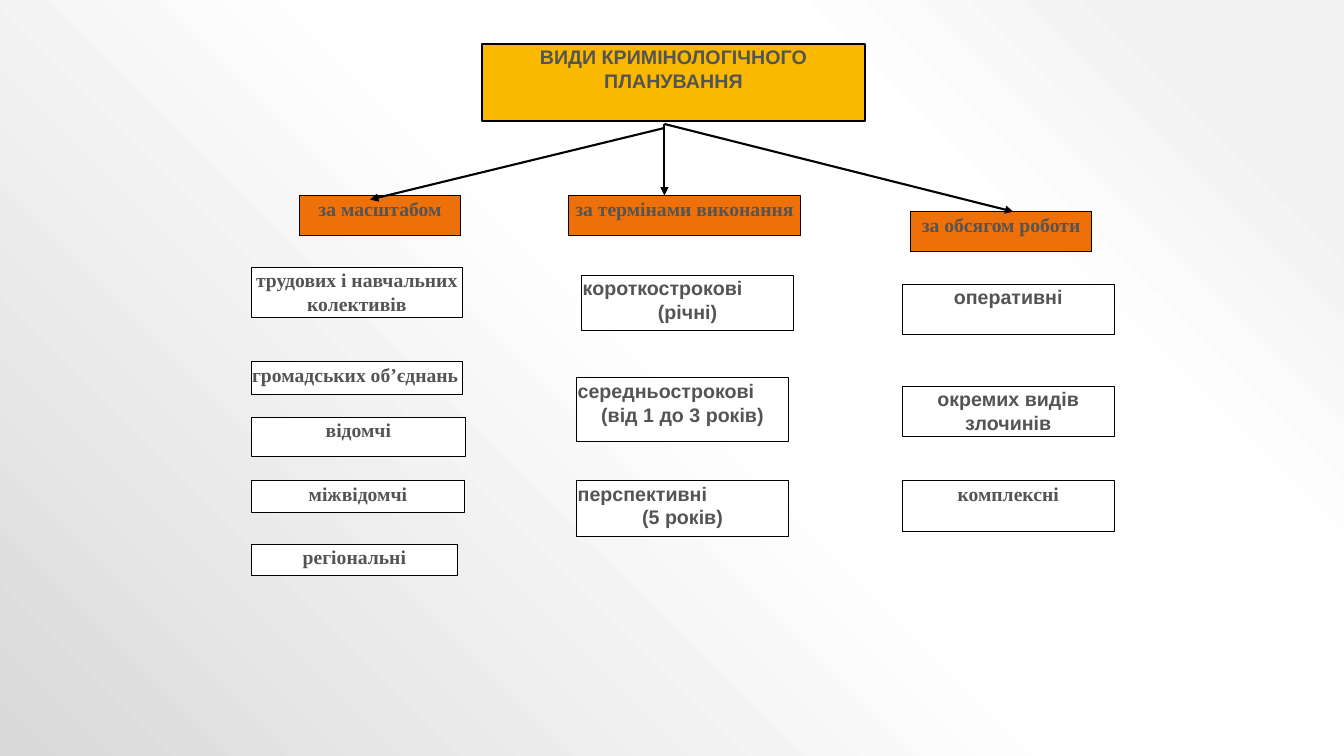
"""Builds a one-slide diagram of the kinds of criminological planning."""
import dataclasses

import lxml.etree
import pptx
import pptx.dml.color
import pptx.enum.shapes
import pptx.enum.text
import pptx.oxml
import pptx.oxml.ns
import pptx.util

Inches = pptx.util.Inches
qn = pptx.oxml.ns.qn
LEFT = pptx.enum.text.PP_ALIGN.LEFT
CENTER = pptx.enum.text.PP_ALIGN.CENTER


@dataclasses.dataclass(frozen=True)
class Theme:
    """Colours, fonts and sizes of the slide."""
    root: str = "FAB900"
    group: str = "EE7008"
    item: str = "FFFFFF"
    line: str = "000000"
    text: str = "545454"
    sans: str = "Arial"
    serif: str = "Times New Roman"
    size: float = 14
    thin: float = 0.75
    thick: float = 1.5
    inset: float = 0.01
    backdrop: tuple = ((10, "F2F2F2"), (28, "FFFFFF"), (48, "FFFFFF"), (100, "D9D9D9"))


class Diagram:
    """Draws the parts of the diagram on one slide."""

    def __init__(self, prs, theme):
        """Adds a title-only slide."""
        self.theme = theme
        self.slide = prs.slides.add_slide(prs.slide_layouts[5])

    def background(self):
        """Fills the slide with a gradient centred on its top right corner."""
        self.slide.background.fill.solid()
        stops = "".join(f'<a:gs pos="{pos * 1000}"><a:srgbClr val="{color}"/></a:gs>'
                        for pos, color in self.theme.backdrop)
        grad = pptx.oxml.parse_xml(
            f'<a:gradFill {pptx.oxml.ns.nsdecls("a")} rotWithShape="1"><a:gsLst>{stops}</a:gsLst>'
            '<a:path path="circle"><a:fillToRect l="100000" b="100000"/></a:path></a:gradFill>')
        solid = next(self.slide.element.iter(qn("a:solidFill")))
        solid.getparent().replace(solid, grad)

    def outline(self, line, width):
        """Sets the colour and width of a line."""
        line.color.rgb = pptx.dml.color.RGBColor.from_string(self.theme.line)
        line.width = pptx.util.Pt(width)

    def dress(self, sp, fill, width, font, paragraphs):
        """Formats a shape and writes its paragraphs."""
        sp.fill.solid()
        sp.fill.fore_color.rgb = pptx.dml.color.RGBColor.from_string(fill)
        self.outline(sp.line, width)
        tf = sp.text_frame
        tf.word_wrap = True
        tf.auto_size = pptx.enum.text.MSO_AUTO_SIZE.NONE
        tf.vertical_anchor = pptx.enum.text.MSO_ANCHOR.TOP
        tf.margin_left = tf.margin_right = Inches(self.theme.inset)
        tf.margin_top = tf.margin_bottom = Inches(self.theme.inset)
        for i, (text, align) in enumerate(paragraphs):
            p = tf.add_paragraph() if i else tf.paragraphs[0]
            p.alignment = align
            r = p.add_run()
            r.text = text
            r.font.name = font
            r.font.size = pptx.util.Pt(self.theme.size)
            r.font.bold = True
            r.font.color.rgb = pptx.dml.color.RGBColor.from_string(self.theme.text)

    def title(self, x, y, w, h, text):
        """Turns the title placeholder into the rounded root box."""
        sp = self.slide.shapes.title
        sp.left, sp.top, sp.width, sp.height = map(Inches, (x, y, w, h))
        geom = lxml.etree.SubElement(sp.element.spPr, qn("a:prstGeom"), prst="roundRect")
        lxml.etree.SubElement(geom, qn("a:avLst"))
        self.dress(sp, self.theme.root, self.theme.thick, self.theme.sans, [(text, CENTER)])

    def box(self, x, y, w, h, fill, font, *paragraphs):
        """Adds a rectangle with text."""
        sp = self.slide.shapes.add_shape(
            pptx.enum.shapes.MSO_SHAPE.RECTANGLE, *map(Inches, (x, y, w, h)))
        sp.shadow.inherit = False
        self.dress(sp, fill, self.theme.thin, font, paragraphs)

    def arrow(self, *ends):
        """Adds a straight arrow from one point to another."""
        cxn = self.slide.shapes.add_connector(
            pptx.enum.shapes.MSO_CONNECTOR.STRAIGHT, *map(Inches, ends))
        self.outline(cxn.line, self.theme.thick)
        lxml.etree.SubElement(cxn.line._get_or_add_ln(), qn("a:tailEnd"), type="triangle")
        lxml.etree.SubElement(cxn.element.spPr, qn("a:effectLst"))


def main():
    """Builds and saves the slide."""
    prs = pptx.Presentation()
    prs.slide_width, prs.slide_height = Inches(13.33), Inches(7.5)
    theme = Theme()
    d = Diagram(prs, theme)
    d.background()
    d.title(4.78, 0.44, 3.8, 0.76, "ВИДИ КРИМІНОЛОГІЧНОГО ПЛАНУВАННЯ")

    for x, y, w, text in (
        (2.97, 1.94, 1.6, "за масштабом"),
        (5.64, 1.94, 2.3, "за термінами виконання"),
        (9.03, 2.1, 1.8, "за обсягом роботи"),
    ):
        d.box(x, y, w, 0.4, theme.group, theme.serif, (text, CENTER))

    for y, w, h, *paragraphs in (
        (2.65, 2.1, 0.5, ("трудових і навчальних", CENTER), ("колективів", CENTER)),
        (3.59, 2.1, 0.32, ("громадських об’єднань", LEFT)),
        (4.14, 2.13, 0.39, ("відомчі", CENTER)),
        (4.77, 2.12, 0.31, ("міжвідомчі", CENTER)),
        (5.4, 2.05, 0.31, ("регіональні", CENTER)),
    ):
        d.box(2.49, y, w, h, theme.item, theme.serif, *paragraphs)

    for x, y, h, term, years in (
        (5.77, 2.73, 0.55, "короткострокові", "(річні)"),
        (5.72, 3.75, 0.63, "середньострокові", "(від 1 до 3 років)"),
        (5.72, 4.77, 0.55, "перспективні", "(5 років)"),
    ):
        d.box(x, y, 2.1, h, theme.item, theme.sans, (term, LEFT), (years, CENTER))

    for y, font, text in (
        (2.82, theme.sans, "оперативні"),
        (3.83, theme.sans, "окремих видів злочинів"),
        (4.77, theme.serif, "комплексні"),
    ):
        d.box(8.95, y, 2.1, 0.5, theme.item, font, (text, CENTER))

    for start_y, end_x, end_y in ((1.27, 3.67, 1.98), (1.23, 6.59, 1.94), (1.23, 10.05, 2.1)):
        d.arrow(6.59, start_y, end_x, end_y)

    prs.save("out.pptx")


if __name__ == "__main__":
    main()
